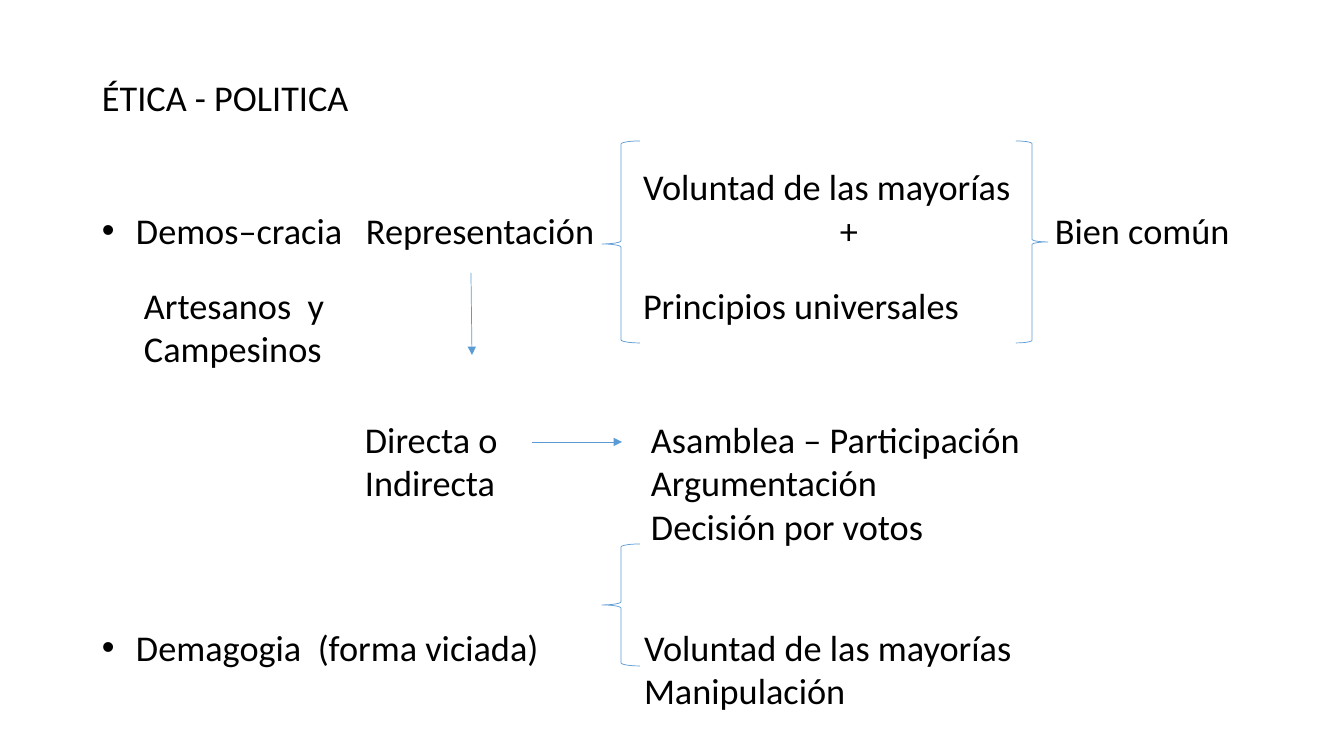
from dataclasses import dataclass

import pptx
import pptx.dml.color
import pptx.enum.shapes
import pptx.enum.text
import pptx.oxml.ns
import pptx.util
from lxml import etree

EMU_PER_PX = 12192000 / 1344
COLOURS = {"text": "000000", "line": "5B9BD5"}
FONT = "Calibri"
TEXT_SIZE = 25.9
LINE_WIDTH = 0.5
LINE_HEIGHT = 44
BULLET_INDENT = 34
BRACE = pptx.enum.shapes.MSO_SHAPE


@dataclass
class Label:
    left: int
    top: int
    width: int
    text: str
    bullet: bool = False


@dataclass
class Brace:
    kind: BRACE
    left: int
    top: int
    width: int
    height: int
    point: float = 0.5


@dataclass
class Arrow:
    start: tuple[int, int]
    end: tuple[int, int]


LABELS = [
    Label(102, 75, 300, "ÉTICA - POLITICA"),
    # Democracy
    Label(102, 208, 260, "Demos–cracia", bullet=True),
    Label(144, 283, 220, "Artesanos  y\nCampesinos"),
    Label(366, 208, 240, "Representación"),
    Label(643, 164, 380, "Voluntad de las mayorías"),
    Label(840, 208, 30, "+"),
    Label(643, 283, 380, "Principios universales"),
    Label(1055, 208, 200, "Bien común"),
    # Forms of representation
    Label(365, 417, 160, "Directa o\nIndirecta"),
    Label(651, 417, 400, "Asamblea – Participación\nArgumentación\nDecisión por votos"),
    # Demagogy
    Label(102, 625, 460, "Demagogia  (forma viciada)", bullet=True),
    Label(644, 625, 400, "Voluntad de las mayorías\nManipulación"),
]

BRACES = [
    Brace(BRACE.LEFT_BRACE, 602, 141, 38, 202, point=0.51),
    Brace(BRACE.RIGHT_BRACE, 1016, 141, 32, 202),
    Brace(BRACE.LEFT_BRACE, 602, 544, 38, 122),
]

ARROWS = [Arrow((471, 273), (472, 355)), Arrow((532, 442), (622, 442))]


def px(length: int) -> pptx.util.Emu:
    return pptx.util.Emu(round(length * EMU_PER_PX))


def colour(name: str) -> pptx.dml.color.RGBColor:
    return pptx.dml.color.RGBColor.from_string(COLOURS[name])


def add_child(parent, tag: str, **attributes: str):
    return etree.SubElement(parent, pptx.oxml.ns.qn(tag), attributes)


def style_line(line) -> None:
    line.color.rgb = colour("line")
    line.width = pptx.util.Pt(LINE_WIDTH)


def add_text(page, text: str, *, left: int, top: int, width: int, bullet: bool = False) -> None:
    lines = text.split("\n")
    box = page.shapes.add_textbox(px(left), px(top), px(width), px(LINE_HEIGHT * len(lines)))
    frame = box.text_frame
    frame.word_wrap = True
    frame.vertical_anchor = pptx.enum.text.MSO_ANCHOR.TOP
    frame.margin_left = frame.margin_right = frame.margin_top = frame.margin_bottom = 0
    frame.text = text
    for para in frame.paragraphs:
        if bullet:
            properties = para._p.get_or_add_pPr()
            properties.set("marL", str(px(BULLET_INDENT)))
            properties.set("indent", str(-px(BULLET_INDENT)))
            add_child(properties, "a:buFont", typeface="Arial")
            add_child(properties, "a:buChar", char="•")
        for span in para.runs:
            span.font.name = FONT
            span.font.size = pptx.util.Pt(TEXT_SIZE)
            span.font.color.rgb = colour("text")


def add_brace(page, brace: Brace) -> None:
    shape = page.shapes.add_shape(
        brace.kind, px(brace.left), px(brace.top), px(brace.width), px(brace.height)
    )
    shape.adjustments[1] = brace.point
    shape.shadow.inherit = False
    shape.fill.background()
    style_line(shape.line)


def add_arrow(page, arrow: Arrow) -> None:
    connector = page.shapes.add_connector(
        pptx.enum.shapes.MSO_CONNECTOR.STRAIGHT,
        *(px(value) for value in arrow.start + arrow.end),
    )
    style_line(connector.line)
    add_child(connector.line._get_or_add_ln(), "a:tailEnd", type="triangle")
    add_child(connector._element.spPr, "a:effectLst")


def main() -> None:
    deck = pptx.Presentation()
    deck.slide_width, deck.slide_height = px(1344), px(756)
    page = deck.slides.add_slide(deck.slide_layouts[6])
    for label in LABELS:
        add_text(page, label.text, left=label.left, top=label.top,
                 width=label.width, bullet=label.bullet)
    for brace in BRACES:
        add_brace(page, brace)
    for arrow in ARROWS:
        add_arrow(page, arrow)
    deck.save("out.pptx")


if __name__ == "__main__":
    main()
